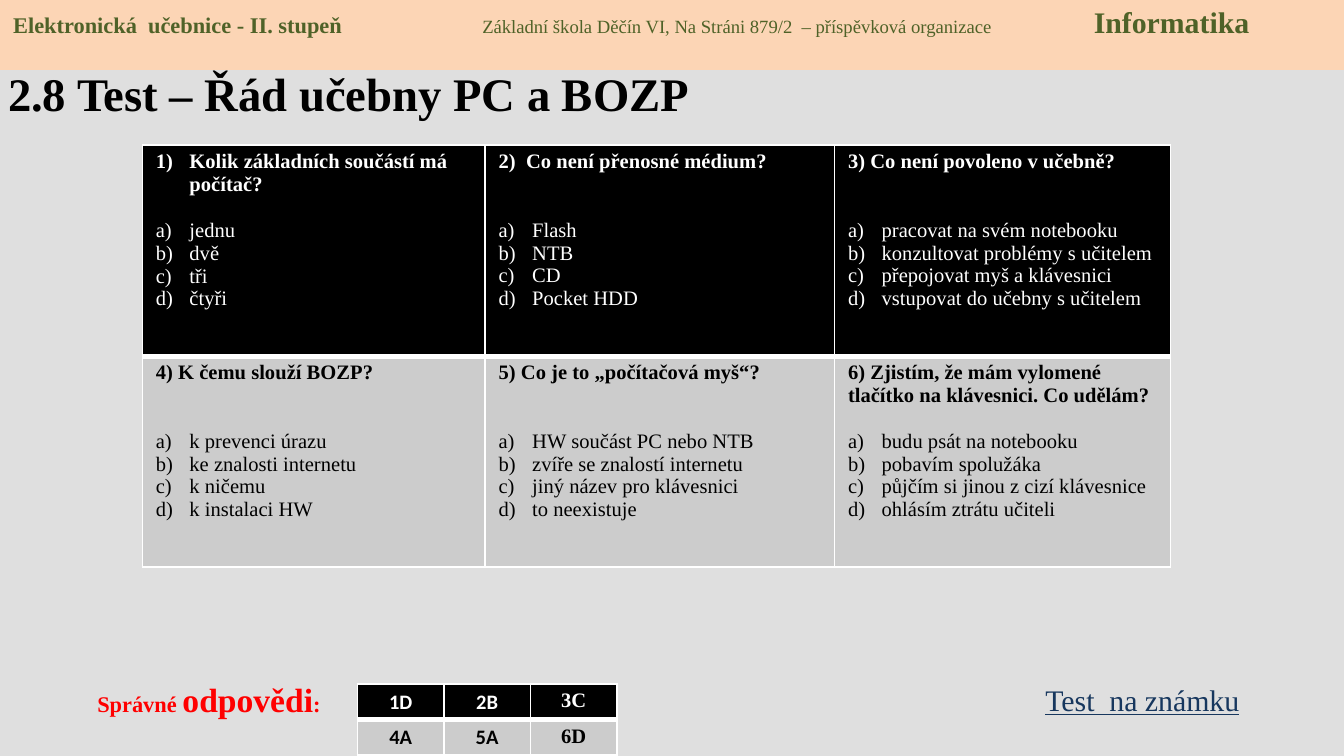
from lxml import etree
from pptx import Presentation
from pptx.dml.color import RGBColor
from pptx.enum import shapes, text
from pptx.oxml import ns
from pptx.util import Inches, Pt

SERIF, SANS = "Times New Roman", "Calibri"
BLACK, WHITE, GREY = "000000", "FFFFFF", "CCCCCC"
RED, NAVY, GREEN, PEACH, BACKGROUND = "FF0000", "17375E", "4F6228", "FCD5B5", "DFDFDF"
ROW_STYLES = [(BLACK, WHITE), (GREY, BLACK)]  # fill, text
CELL_SIZE = 11
LINE = 12.2  # height of one table line in points

TITLE = "2.8 Test – Řád učebny PC a BOZP"
HEADER = [
    ("Elektronická  učebnice - II. stupeň\t", 12, True),
    ("Základní škola Děčín VI, Na Stráni 879/2  – příspěvková organizace\t", 10, False),
    ("Informatika", 16, True),
]
HEADER_TABS = [3.49, 8.04]
# question, number of lines it takes, answers
QUESTIONS = [
    [
        ("Kolik základních součástí má počítač?", 2, ["jednu", "dvě", "tři", "čtyři"]),
        ("2)  Co není přenosné médium?", 1, ["Flash", "NTB", "CD", "Pocket HDD"]),
        ("3) Co není povoleno v učebně?", 1,
         ["pracovat na svém notebooku", "konzultovat problémy s učitelem",
          "přepojovat myš a klávesnici", "vstupovat do učebny s učitelem"]),
    ],
    [
        ("4) K čemu slouží BOZP?", 1,
         ["k prevenci úrazu", "ke znalosti internetu", "k ničemu", "k instalaci HW"]),
        ("5) Co je to „počítačová myš“?", 1,
         ["HW součást PC nebo NTB", "zvíře se znalostí internetu",
          "jiný název pro klávesnici", "to neexistuje"]),
        ("6) Zjistím, že mám vylomené tlačítko na klávesnici. Co udělám?", 2,
         ["budu psát na notebooku", "pobavím spolužáka",
          "půjčím si jinou z cizí klávesnice", "ohlásím ztrátu učiteli"]),
    ],
]
KEY = [["1D", "2B", "3C"], ["4A", "5A", "6D"]]
KEY_FONTS = [SANS, SANS, SERIF]
KEY_LABEL = [("Správné ", 12, True), ("odpovědi", 18, True), (":", 12, True)]


def rgb(color):
    return RGBColor.from_string(color)


def add_run(p, words, size, color, bold=False, font=SERIF):
    r = p.add_run()
    r.text = words
    r.font.size, r.font.bold, r.font.name = Pt(size), bold, font
    r.font.color.rgb = rgb(color)
    return r


def number(p, scheme):
    """Give the paragraph an automatic number and a hanging indent."""
    pPr = p._p.get_or_add_pPr()
    pPr.set("marL", str(Inches(0.25)))
    pPr.set("indent", str(-Inches(0.25)))
    etree.SubElement(pPr, ns.qn("a:buFont"), typeface="+mj-lt")
    etree.SubElement(pPr, ns.qn("a:buAutoNum"), type=scheme)


def add_borders(cell, row):
    """Draw white borders, thick between the first and second row."""
    widths = {"lnL": 1, "lnR": 1, "lnT": 3 if row else 1, "lnB": 1 if row else 3}
    tcPr = cell._tc.get_or_add_tcPr()
    for side, width in widths.items():
        ln = etree.SubElement(tcPr, ns.qn(f"a:{side}"), w=str(Pt(width)))
        fill = etree.SubElement(ln, ns.qn("a:solidFill"))
        etree.SubElement(fill, ns.qn("a:srgbClr"), val=WHITE)


def add_grid(s, left, top, widths, row_height, data, fill_cell):
    table = s.shapes.add_table(len(data), len(widths), Inches(left), Inches(top),
                               Inches(sum(widths)), Inches(row_height * len(data))).table
    for column, width in zip(table.columns, widths):
        column.width = Inches(width)
    for i, (items, (fill, color)) in enumerate(zip(data, ROW_STYLES)):
        for j, item in enumerate(items):
            cell = table.cell(i, j)
            cell.margin_top = cell.margin_bottom = Inches(0.04)
            add_borders(cell, i)
            cell.fill.solid()
            cell.fill.fore_color.rgb = rgb(fill)
            fill_cell(cell.text_frame, item, color, j)


def fill_question(tf, item, color, column):
    question, lines, answers = item
    p = tf.paragraphs[0]
    add_run(p, question, CELL_SIZE, color, True)
    if not question[0].isdigit():
        number(p, "arabicParenR")
    for i, answer in enumerate(answers):
        p = tf.add_paragraph()
        if i == 0:
            p.space_before = Pt((3 - lines) * LINE)
        number(p, "alphaLcParenR")
        add_run(p, answer, CELL_SIZE, color)


def fill_key(tf, item, color, column):
    p = tf.paragraphs[0]
    p.alignment = text.PP_ALIGN.CENTER
    add_run(p, item, CELL_SIZE, color, True, KEY_FONTS[column])


def add_label(s, left, top, width, height):
    tf = s.shapes.add_textbox(Inches(left), Inches(top), Inches(width), Inches(height)).text_frame
    tf.word_wrap = True
    return tf.paragraphs[0]


def add_header(s):
    sp = s.shapes.add_shape(shapes.MSO_SHAPE.RECTANGLE, 0, Inches(-0.02), Inches(10), Inches(0.54))
    sp.shadow.inherit = False
    sp.fill.solid()
    sp.fill.fore_color.rgb = rgb(PEACH)
    sp.line.fill.background()
    tf = sp.text_frame
    tf.word_wrap = True
    tf.vertical_anchor = text.MSO_ANCHOR.TOP
    p = tf.paragraphs[0]
    p.alignment = text.PP_ALIGN.LEFT
    tabs = etree.SubElement(p._p.get_or_add_pPr(), ns.qn("a:tabLst"))
    for position in HEADER_TABS:
        etree.SubElement(tabs, ns.qn("a:tab"), pos=str(Inches(position)), algn="l")
    for words, size, bold in HEADER:
        add_run(p, words, size, GREEN, bold)


def main():
    prs = Presentation()
    prs.slide_width = Inches(10)
    prs.slide_height = Inches(10 * 9 / 16)
    s = prs.slides.add_slide(prs.slide_layouts[5])
    s.background.fill.solid()
    s.background.fill.fore_color.rgb = rgb(BACKGROUND)

    title = s.shapes.title
    title.left, title.top = Inches(-0.04), Inches(0.22)
    title.width, title.height = Inches(9), Inches(0.94)
    tf = title.text_frame
    tf.auto_size = text.MSO_AUTO_SIZE.NONE
    tf.vertical_anchor = text.MSO_ANCHOR.MIDDLE
    tf.paragraphs[0].alignment = text.PP_ALIGN.LEFT
    add_run(tf.paragraphs[0], TITLE, 25, BLACK, True)

    add_grid(s, 1.06, 1.08, [2.55, 2.6, 2.5], 1.57, QUESTIONS, fill_question)

    p = add_label(s, 0.39, 5, 2.33, 0.4)
    p.alignment = text.PP_ALIGN.CENTER
    for words, size, bold in KEY_LABEL:
        add_run(p, words, size, RED, bold)
    p = add_label(s, 7.68, 5.02, 1.89, 0.37)
    add_run(p, "Test  na známku", 16, NAVY).font.underline = True

    add_grid(s, 2.66, 5.09, [1.93 / 3] * 3, 0.26, KEY, fill_key)
    add_header(s)
    prs.save("out.pptx")


if __name__ == "__main__":
    main()
